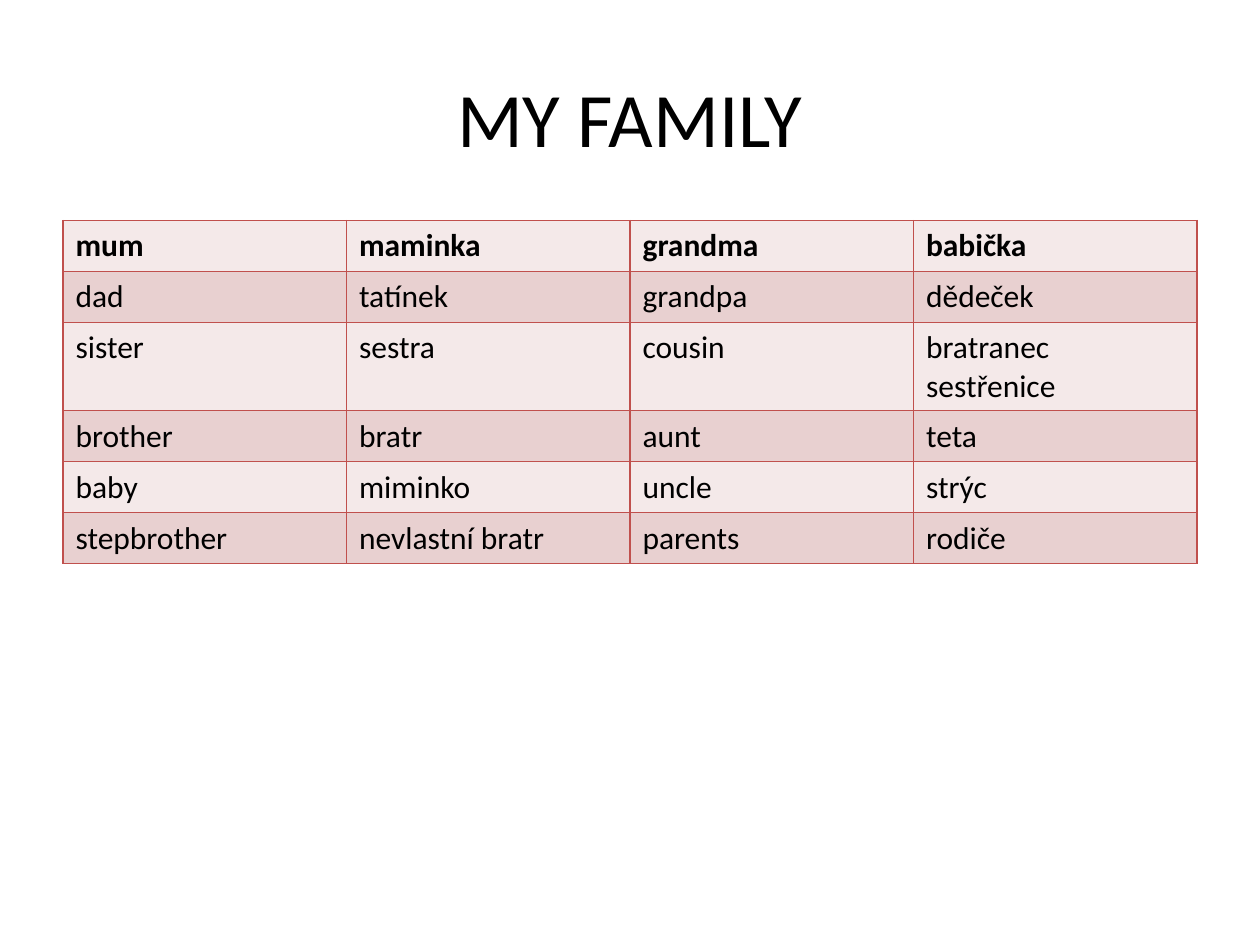
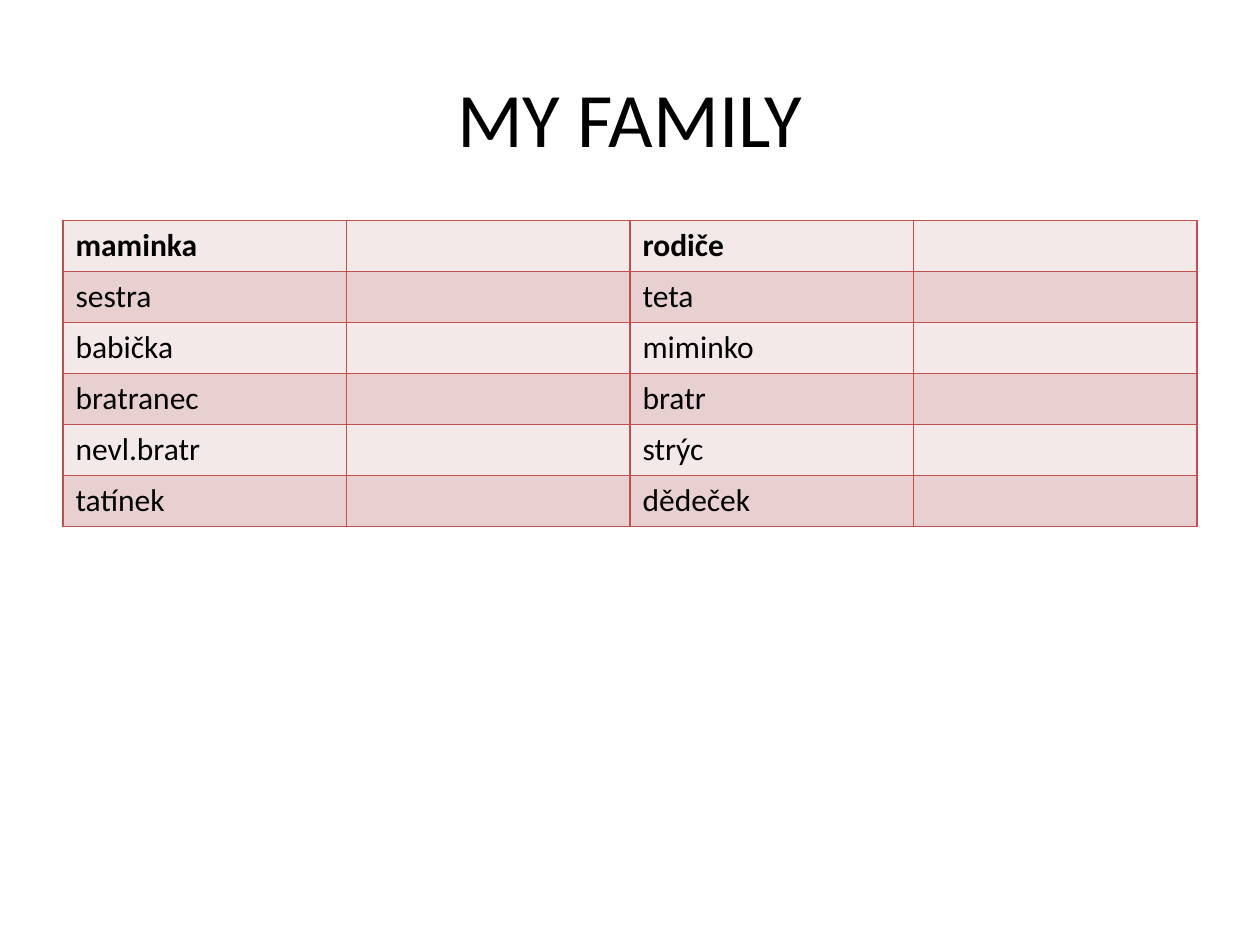
from lxml.etree import SubElement
from pptx import Presentation
from pptx.dml.color import RGBColor
from pptx.enum.text import MSO_ANCHOR, PP_ALIGN
from pptx.oxml.ns import qn
from pptx.util import Inches, Pt

COLORS = {"text": "000000", "border": "C0504D", "light": "F4E9E9", "dark": "E8D0D0"}
FONT = "Calibri"
TITLE = "MY FAMILY"

# Vocabulary: one table per slide, the first row is bold
TABLES = [
    [
        ["mum", "maminka", "grandma", "babička"],
        ["dad", "tatínek", "grandpa", "dědeček"],
        ["sister", "sestra", "cousin", "bratranec sestřenice"],
        ["brother", "bratr", "aunt", "teta"],
        ["baby", "miminko", "uncle", "strýc"],
        ["stepbrother", "nevlastní bratr", "parents", "rodiče"],
    ],
    [
        ["maminka", "", "rodiče", ""],
        ["sestra", "", "teta", ""],
        ["babička", "", "miminko", ""],
        ["bratranec", "", "bratr", ""],
        ["nevl.bratr", "", "strýc", ""],
        ["tatínek", "", "dědeček", ""],
    ],
]


def style_text(p, size, bold=False):
    p.font.name = FONT
    p.font.size = Pt(size)
    p.font.bold = bold
    p.font.color.rgb = RGBColor.from_string(COLORS["text"])


def add_borders(cell):
    # Called before the fill is set, as the lines must precede it
    tc_pr = cell._tc.get_or_add_tcPr()
    for side in ("a:lnL", "a:lnR", "a:lnT", "a:lnB"):
        ln = SubElement(tc_pr, qn(side), w=str(Pt(1)))
        fill = SubElement(ln, qn("a:solidFill"))
        SubElement(fill, qn("a:srgbClr"), val=COLORS["border"])


prs = Presentation()
prs.slide_width, prs.slide_height = Inches(10), Inches(7.5)

# Grid shared by both slides
margin = int(prs.slide_width * 0.05)
content_w = prs.slide_width - 2 * margin
title_top, title_h = int(prs.slide_height * 0.04), Inches(1.25)
table_top, row_h = Inches(1.75), Inches(0.405)

for rows in TABLES:
    s = prs.slides.add_slide(prs.slide_layouts[6])

    # Title
    sp = s.shapes.add_textbox(margin, title_top, content_w, title_h)
    tf = sp.text_frame
    tf.word_wrap = True
    tf.vertical_anchor = MSO_ANCHOR.MIDDLE
    p = tf.paragraphs[0]
    p.text = TITLE
    p.alignment = PP_ALIGN.CENTER
    style_text(p, 44)

    # Word table
    tbl = s.shapes.add_table(len(rows), len(rows[0]), margin, table_top,
                             content_w, row_h * len(rows)).table
    tbl.first_row = tbl.horz_banding = False
    for i, words in enumerate(rows):
        band = COLORS["dark" if i % 2 else "light"]
        for j, word in enumerate(words):
            cell = tbl.cell(i, j)
            add_borders(cell)
            cell.fill.solid()
            cell.fill.fore_color.rgb = RGBColor.from_string(band)
            p = cell.text_frame.paragraphs[0]
            p.text = word
            style_text(p, 18, bold=i == 0)

prs.save("out.pptx")
